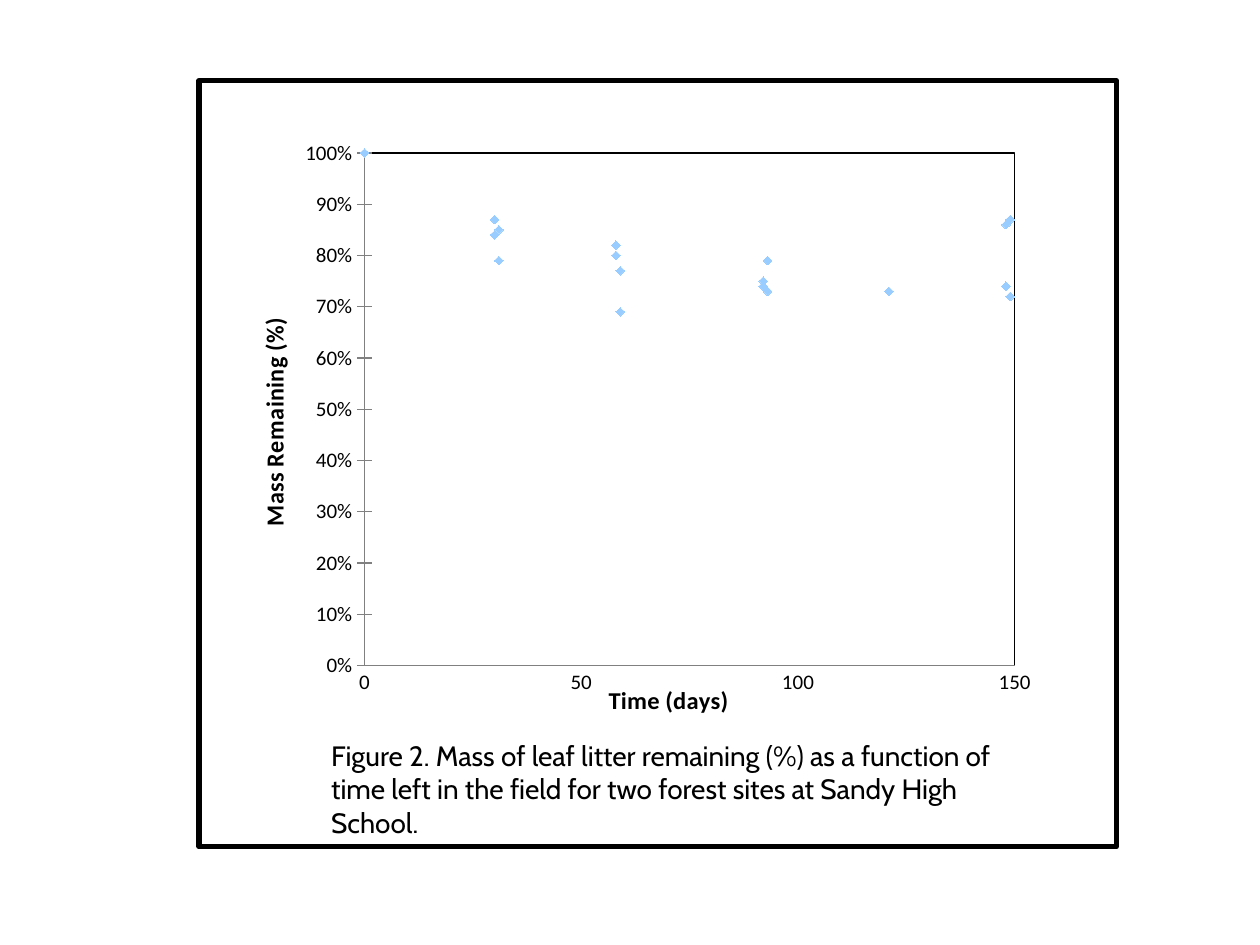
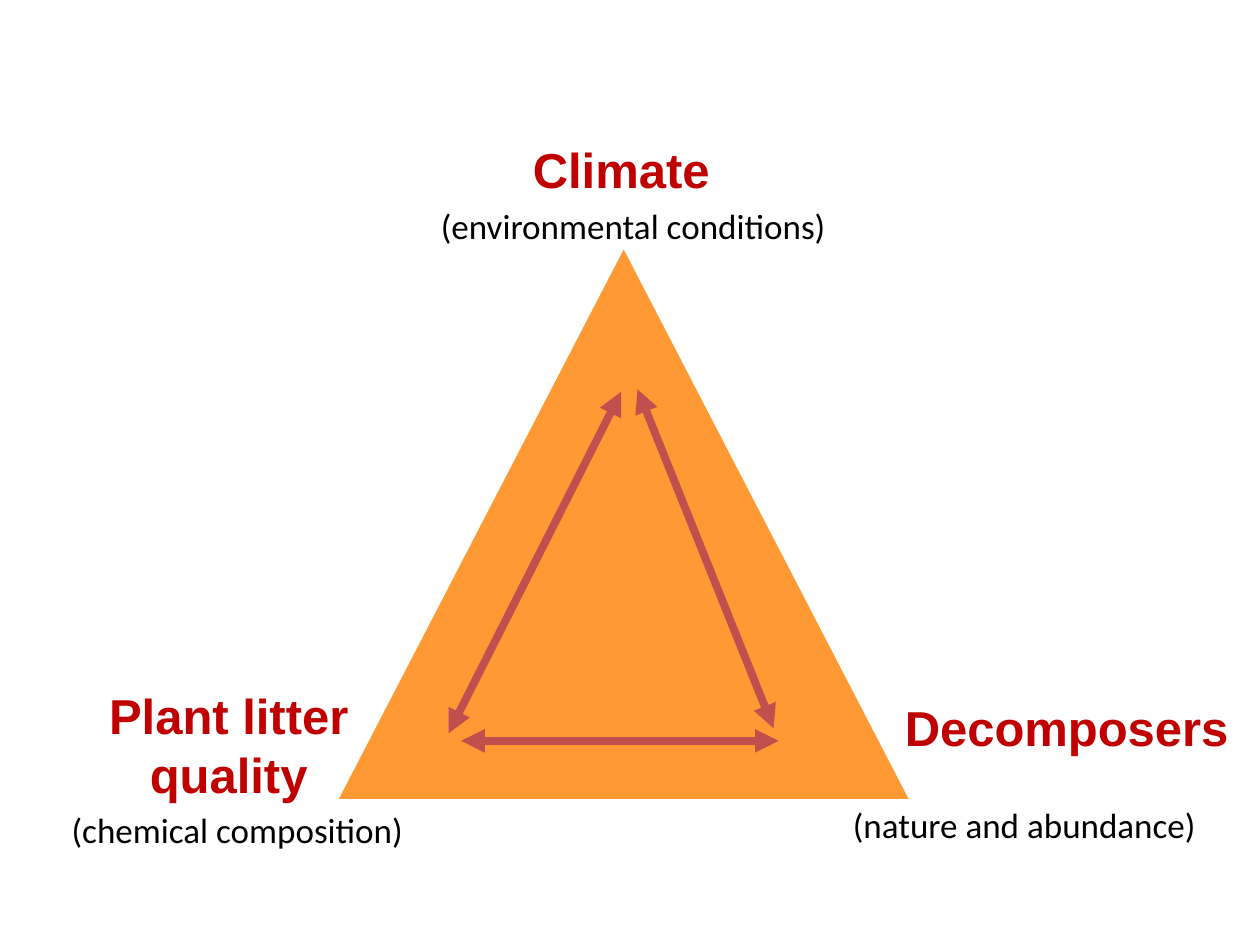
from dataclasses import dataclass

import lxml.etree
import pptx
import pptx.chart.data
import pptx.dml.color
import pptx.enum.chart
import pptx.enum.shapes
import pptx.enum.text
import pptx.oxml.ns
import pptx.util
from pptx.util import Inches

BLACK, WHITE, GRAY = "000000", "FFFFFF", "808080"
RED, ORANGE, BRICK, SKY = "C00000", "FF9933", "C0504D", "99CCFF"
qn = pptx.oxml.ns.qn
Box = tuple[float, float, float, float]
Point = tuple[float, float]


@dataclass
class TextStyle:
    font: str
    size: float
    color: str = BLACK
    bold: bool = False
    centered: bool = False
    wrap: bool = True


@dataclass
class Label:
    text: str
    box: Box
    style: TextStyle


CAPTION = TextStyle("Cabin", 16)
FACTOR = TextStyle("Arial", 28, RED, bold=True, centered=True)
DETAIL = TextStyle("Calibri", 20, wrap=False)

# Days in the field and the mass fractions measured on that day
MASS_BY_DAY = [
    (31, [0.79, 0.85]), (30, [0.84, 0.87]), (59, [0.77, 0.69]),
    (58, [0.82, 0.80]), (93, [0.79, 0.73]), (92, [0.74, 0.75]),
    (121, [0.73]), (149, [0.87, 0.72]), (148, [0.74, 0.86]),
    (0, [1, 1, 1, 1]),
]

FIGURE_CAPTION = Label(
    "Figure 2. Mass of leaf litter remaining (%) as a function of time left "
    "in the field for two forest sites at Sandy High School.",
    (2.53, 5.81, 5.65, 0.91), CAPTION)

FACTOR_LABELS = [
    Label("Climate", (3.38, 1.06, 3.1, 0.57), FACTOR),
    Label("Decomposers", (7.01, 5.49, 2.91, 0.57), FACTOR),
    Label("Plant litter quality", (0.69, 5.39, 2.25, 1.03), FACTOR),
    Label("(environmental conditions)", (3.4, 1.57, 3.49, 0.44), DETAIL),
    Label("(chemical composition)", (0.47, 6.37, 3.07, 0.44), DETAIL),
    Label("(nature and abundance)", (6.67, 6.33, 3.19, 0.44), DETAIL),
]

INTERACTIONS: list[tuple[Point, Point]] = [
    ((3.56, 5.82), (4.93, 3.11)),
    ((3.66, 5.88), (6.18, 5.88)),
    ((5.06, 3.09), (6.14, 5.78)),
]


def rgb(color: str) -> pptx.dml.color.RGBColor:
    return pptx.dml.color.RGBColor.from_string(color)


def set_font(font, style: TextStyle) -> None:
    font.name = style.font
    font.size = pptx.util.Pt(style.size)
    font.bold = style.bold
    font.color.rgb = rgb(style.color)


def set_line(line, color: str, width: float) -> None:
    line.color.rgb = rgb(color)
    line.width = pptx.util.Pt(width)


def add_label(slide, label: Label) -> None:
    tf = slide.shapes.add_textbox(*map(Inches, label.box)).text_frame
    tf.word_wrap = label.style.wrap
    tf.auto_size = pptx.enum.text.MSO_AUTO_SIZE.SHAPE_TO_FIT_TEXT
    p = tf.paragraphs[0]
    if label.style.centered:
        p.alignment = pptx.enum.text.PP_ALIGN.CENTER
    r = p.add_run()
    r.text = label.text
    set_font(r.font, label.style)


def add_filled_shape(slide, kind, box: Box, fill: str):
    sp = slide.shapes.add_shape(kind, *map(Inches, box))
    sp.shadow.inherit = False
    sp.fill.solid()
    sp.fill.fore_color.rgb = rgb(fill)
    sp.line.fill.background()
    return sp


def add_double_arrow(slide, start: Point, end: Point) -> None:
    cxn = slide.shapes.add_connector(
        pptx.enum.shapes.MSO_CONNECTOR.STRAIGHT, *map(Inches, start + end))
    set_line(cxn.line, BRICK, 4.5)
    sp_pr = cxn._element.spPr
    ln = sp_pr.find(qn("a:ln"))
    for tag in ("a:headEnd", "a:tailEnd"):
        lxml.etree.SubElement(ln, qn(tag), type="triangle")
    lxml.etree.SubElement(sp_pr, qn("a:effectLst"))


def set_layout(parent, index: int, **settings) -> None:
    """Place a chart part by hand, as fractions of the chart."""
    for old in parent.findall(qn("c:layout")):
        parent.remove(old)
    layout = lxml.etree.Element(qn("c:layout"))
    manual = lxml.etree.SubElement(layout, qn("c:manualLayout"))
    for tag, value in settings.items():
        lxml.etree.SubElement(manual, qn(f"c:{tag}"), val=str(value))
    parent.insert(index, layout)


def style_axis(axis, title: str, title_at: Point, top: float, step: float,
               tick, number_format: str) -> None:
    axis.minimum_scale, axis.maximum_scale, axis.major_unit = 0, top, step
    axis.has_major_gridlines = False
    axis.major_tick_mark = tick
    axis.minor_tick_mark = pptx.enum.chart.XL_TICK_MARK.NONE
    axis.tick_labels.number_format = number_format
    axis.tick_labels.number_format_is_linked = False
    set_font(axis.tick_labels.font, TextStyle("Calibri", 12))
    set_line(axis.format.line, GRAY, 0.75)
    r = axis.axis_title.text_frame.paragraphs[0].add_run()
    r.text = title
    set_font(r.font, TextStyle("Calibri", 14, bold=True))
    x, y = title_at
    set_layout(axis.axis_title._element, 1, xMode="edge", yMode="edge", x=x, y=y)


def frame_plot(chart) -> None:
    plot_area = chart._chartSpace.chart.plotArea
    set_layout(plot_area, 0, layoutTarget="inner", xMode="edge", yMode="edge",
               x=0.167, y=0.025, w=0.795, h=0.892)
    sp_pr = lxml.etree.SubElement(plot_area, qn("c:spPr"))
    lxml.etree.SubElement(sp_pr, qn("a:noFill"))
    ln = lxml.etree.SubElement(sp_pr, qn("a:ln"), w=str(pptx.util.Pt(0.75)))
    fill = lxml.etree.SubElement(ln, qn("a:solidFill"))
    lxml.etree.SubElement(fill, qn("a:srgbClr"), val=BLACK)


def add_mass_chart(slide, box: Box) -> None:
    data = pptx.chart.data.XyChartData()
    points = data.add_series("Series 1")
    for day, fractions in MASS_BY_DAY:
        for fraction in fractions:
            points.add_data_point(day, fraction)
    chart = slide.shapes.add_chart(
        pptx.enum.chart.XL_CHART_TYPE.XY_SCATTER, *map(Inches, box), data).chart
    chart.has_legend = False
    chart.has_title = False
    set_font(chart.font, TextStyle("Calibri", 10))

    plot = chart.plots[0]
    plot.vary_by_categories = False
    series = plot.series[0]
    series.format.line.fill.background()
    marker = series.marker
    marker.style = pptx.enum.chart.XL_MARKER_STYLE.DIAMOND
    marker.size = 5
    marker.format.fill.solid()
    marker.format.fill.fore_color.rgb = rgb(SKY)
    set_line(marker.format.line, SKY, 0.75)

    ticks = pptx.enum.chart.XL_TICK_MARK
    style_axis(chart.category_axis, "Time (days)", (0.46, 0.94),
               150, 50, ticks.NONE, "General")
    style_axis(chart.value_axis, "Mass Remaining (%)", (0.03, 0.31),
               1, 0.1, ticks.CROSS, "0%")
    frame_plot(chart)


def build_mass_slide(slide) -> None:
    shapes = pptx.enum.shapes.MSO_SHAPE
    frame = add_filled_shape(slide, shapes.RECTANGLE,
                             (1.58, 0.64, 7.28, 6.08), WHITE)
    set_line(frame.line, BLACK, 3)
    add_mass_chart(slide, (1.81, 1.1, 6.49, 4.64))
    add_label(slide, FIGURE_CAPTION)


def build_triangle_slide(slide) -> None:
    add_filled_shape(slide, pptx.enum.shapes.MSO_SHAPE.ISOSCELES_TRIANGLE,
                     (2.69, 1.98, 4.52, 4.36), ORANGE)
    for start, end in INTERACTIONS:
        add_double_arrow(slide, start, end)
    for label in FACTOR_LABELS:
        add_label(slide, label)


def main() -> None:
    prs = pptx.Presentation()
    prs.slide_width, prs.slide_height = Inches(10), Inches(7.5)
    for build in (build_mass_slide, build_triangle_slide):
        build(prs.slides.add_slide(prs.slide_layouts[6]))
    prs.save("out.pptx")


if __name__ == "__main__":
    main()
